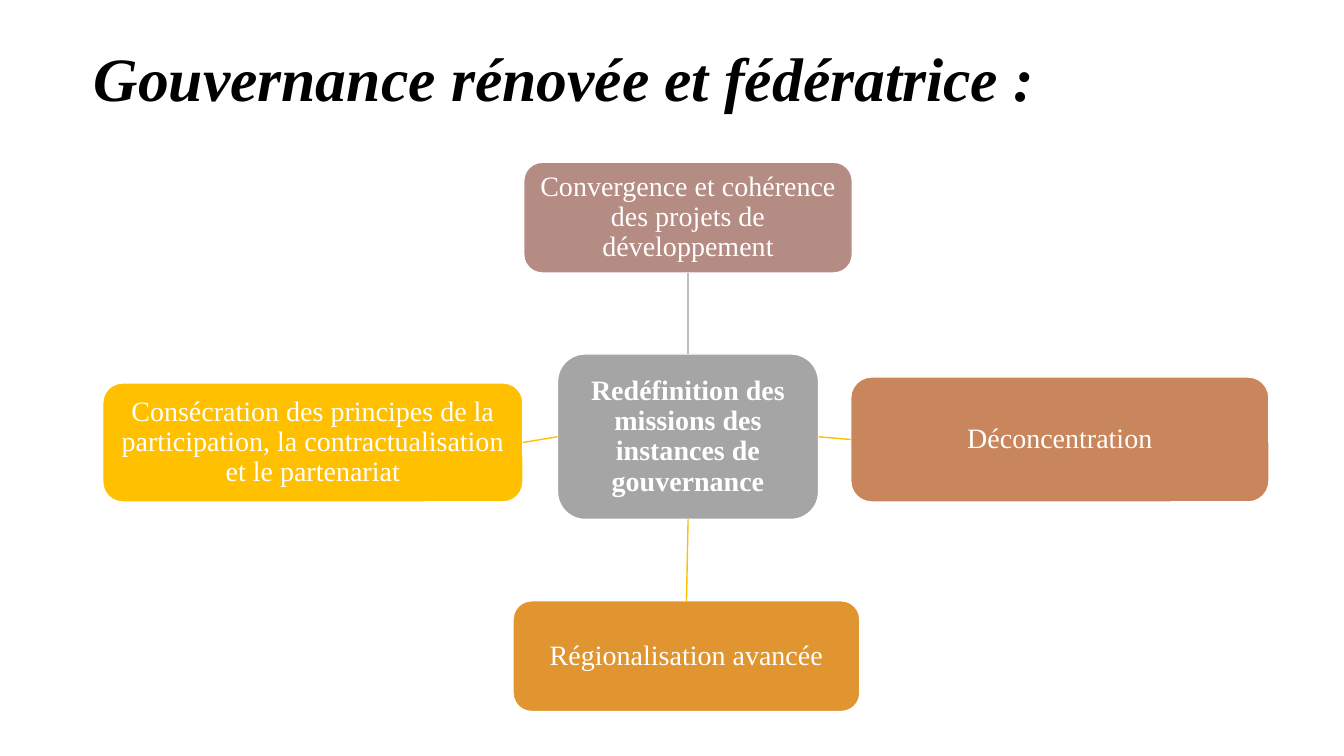
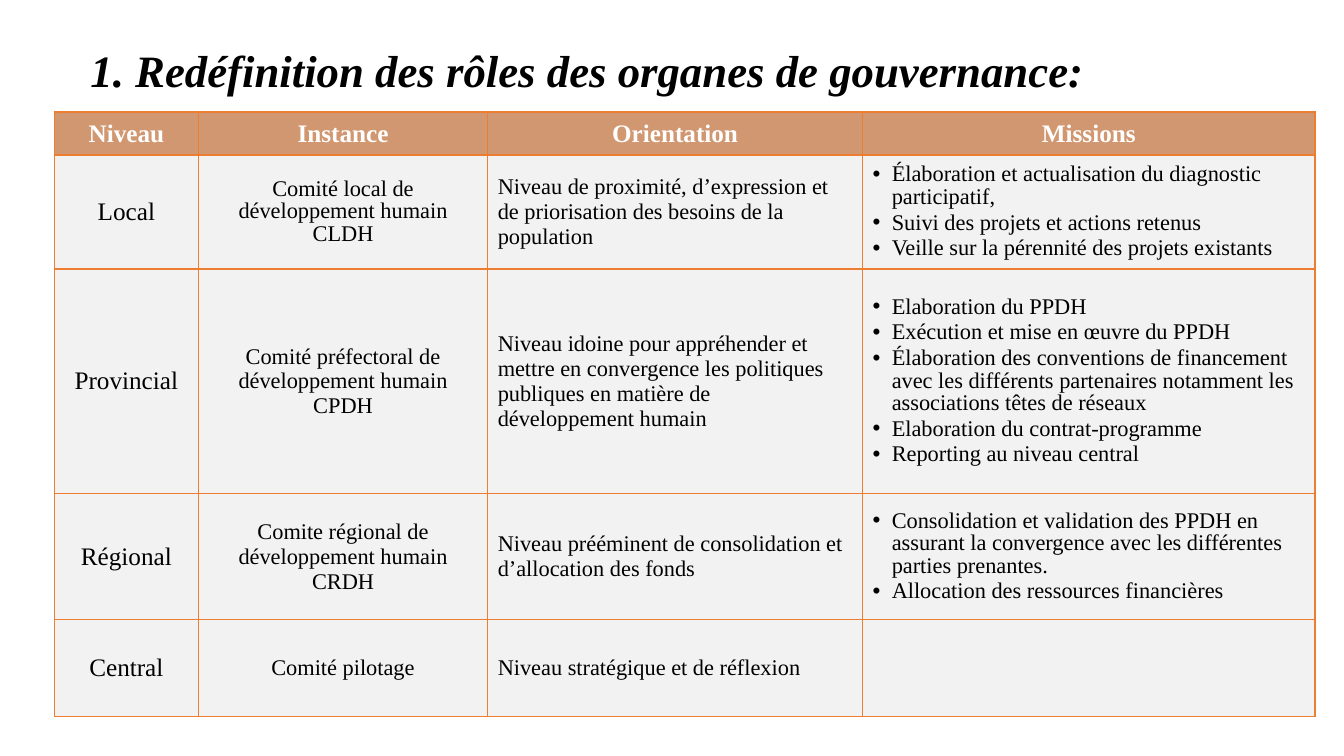
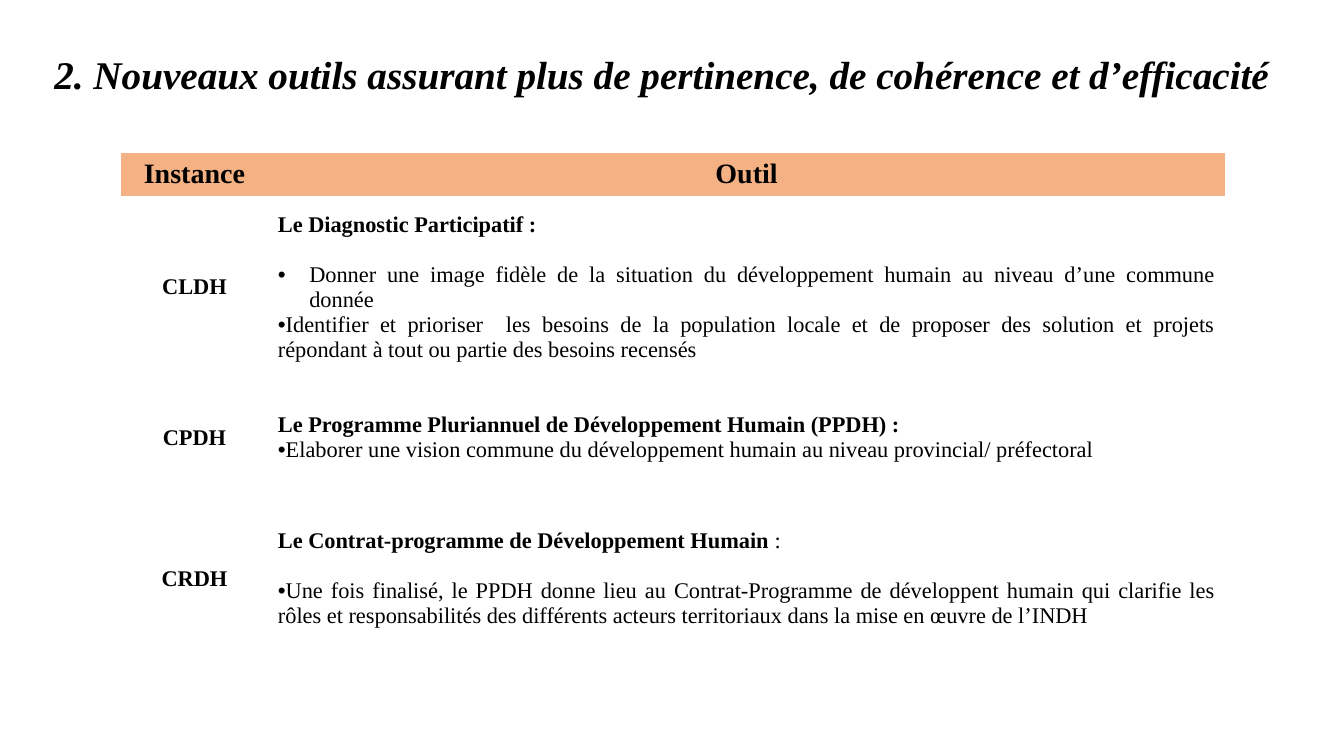
from dataclasses import dataclass
from functools import partial
from typing import Optional, Sequence

from lxml.etree import SubElement
from pptx import Presentation
from pptx.dml.color import RGBColor
from pptx.enum.shapes import MSO_CONNECTOR, MSO_SHAPE
from pptx.enum.text import MSO_ANCHOR, PP_ALIGN
from pptx.oxml.ns import qn
from pptx.util import Cm, Pt

COLORS = {
    "black": "000000", "white": "FFFFFF",
    "grey": "A5A5A5", "rose": "B48C83", "copper": "C9855C",
    "amber": "E19530", "gold": "FFC000", "silver": "BFBFBF",
    "border": "ED7D31", "header": "D19770", "cell": "F2F2F2", "peach": "F4B183",
}
FONT = "Times New Roman"
LEFT, CENTER, JUSTIFY = PP_ALIGN.LEFT, PP_ALIGN.CENTER, PP_ALIGN.JUSTIFY
TOP_SIDE, LEFT_SIDE, BOTTOM_SIDE, RIGHT_SIDE = range(4)


@dataclass(frozen=True)
class Para:
    """A paragraph; tail is a closing run in regular weight, indent (cm) adds a bullet."""
    text: str
    size: float = 16
    bold: bool = False
    italic: bool = False
    color: str = "black"
    align: PP_ALIGN = LEFT
    spacing: float = 1.0
    after: float = 0
    indent: Optional[float] = None
    tail: str = ""


@dataclass(frozen=True)
class Box:
    left: float
    top: float
    width: float
    height: float

    def lengths(self) -> list:
        return [Cm(v) for v in (self.left, self.top, self.width, self.height)]


@dataclass(frozen=True)
class Branch:
    """A box tied to the hub: hub_side and side are the joined sides."""
    text: str
    box: Box
    fill: str
    line: str
    hub_side: int
    side: int


@dataclass(frozen=True)
class Grid:
    left: float
    top: float
    cols: Sequence[float]
    rows: Sequence[float]
    header_fill: str
    body_fill: str
    border: Optional[str] = None


def rgb(name: str) -> RGBColor:
    return RGBColor.from_string(COLORS[name])


def apply(target, values: dict) -> None:
    for name, value in values.items():
        setattr(target, name, value)


def add_bullet(p, indent: float) -> None:
    pPr = p._p.get_or_add_pPr()
    pPr.set("marL", str(Cm(indent)))
    pPr.set("indent", str(-Cm(indent)))
    SubElement(pPr, qn("a:buFont"), typeface="Arial")
    SubElement(pPr, qn("a:buChar"), char="•")


def write(tf, paras: Sequence[Para]) -> None:
    for i, para in enumerate(paras):
        p = tf.add_paragraph() if i else tf.paragraphs[0]
        if para.indent is not None:
            add_bullet(p, para.indent)
        apply(p, {"alignment": para.align, "line_spacing": para.spacing,
                  "space_before": Pt(0), "space_after": Pt(para.after)})
        for text, bold in ((para.text, para.bold), (para.tail, False)):
            if text:
                r = p.add_run()
                r.text = text
                apply(r.font, {"name": FONT, "size": Pt(para.size),
                               "bold": bold, "italic": para.italic})
                r.font.color.rgb = rgb(para.color)


def add_title(s, text: str, size: float, box: Box) -> None:
    tf = s.shapes.add_textbox(*box.lengths()).text_frame
    apply(tf, {"word_wrap": True, "vertical_anchor": MSO_ANCHOR.MIDDLE})
    write(tf, [Para(text, size, bold=True, italic=True, spacing=0.9)])


def add_box(s, text: str, box: Box, fill: str, bold: bool = False):
    sp = s.shapes.add_shape(MSO_SHAPE.ROUNDED_RECTANGLE, *box.lengths())
    sp.shadow.inherit = False
    sp.fill.solid()
    sp.fill.fore_color.rgb = rgb(fill)
    sp.line.color.rgb = rgb("white")
    sp.line.width = Pt(1)
    tf = sp.text_frame
    apply(tf, {"word_wrap": True, "vertical_anchor": MSO_ANCHOR.MIDDLE})
    apply(tf, {f"margin_{side}": Cm(0.15) for side in ("left", "top", "right", "bottom")})
    write(tf, [Para(text, 20, bold, color="white", align=CENTER, spacing=0.9)])
    return sp


def join(s, start, start_side: int, end, end_side: int, color: str) -> None:
    line = s.shapes.add_connector(MSO_CONNECTOR.STRAIGHT, 0, 0, 0, 0)
    line.begin_connect(start, start_side)
    line.end_connect(end, end_side)
    line.line.color.rgb = rgb(color)
    line.line.width = Pt(1)
    SubElement(line._element.spPr, qn("a:effectLst"))


def set_borders(cell, color: Optional[str], widths: dict) -> None:
    """Draw the four sides, or hide them when there is no color."""
    tcPr = cell._tc.get_or_add_tcPr()
    for side, width in widths.items():
        ln = SubElement(tcPr, qn(f"a:ln{side}"), w=str(Pt(width)))
        if color:
            fill = SubElement(ln, qn("a:solidFill"))
            SubElement(fill, qn("a:srgbClr"), val=COLORS[color])
        else:
            SubElement(ln, qn("a:noFill"))


def add_grid(s, grid: Grid, content: Sequence[Sequence[Sequence[Para]]]) -> None:
    box = Box(grid.left, grid.top, sum(grid.cols), sum(grid.rows))
    table = s.shapes.add_table(len(grid.rows), len(grid.cols), *box.lengths()).table
    apply(table, {"first_row": False, "horz_banding": False})
    for column, width in zip(table.columns, grid.cols):
        column.width = Cm(width)
    for i, (row, height, cells) in enumerate(zip(table.rows, grid.rows, content)):
        row.height = Cm(height)
        widths = {"L": 1, "R": 1, "T": 2 if i == 1 else 1, "B": 2 if i == 0 else 1}
        for cell, paras in zip(row.cells, cells):
            set_borders(cell, grid.border, widths)
            cell.fill.solid()
            cell.fill.fore_color.rgb = rgb(grid.body_fill if i else grid.header_fill)
            cell.vertical_anchor = MSO_ANCHOR.MIDDLE
            write(cell.text_frame, paras)


HUB = Box(14.05, 8.92, 6.58, 4.17)
BRANCHES = [
    Branch("Convergence et cohérence des projets de développement",
           Box(13.2, 4.09, 8.28, 2.79), "rose", "silver", TOP_SIDE, BOTTOM_SIDE),
    Branch("Déconcentration",
           Box(21.44, 9.5, 10.54, 3.15), "copper", "gold", RIGHT_SIDE, LEFT_SIDE),
    Branch("Régionalisation avancée",
           Box(12.93, 15.14, 8.74, 2.79), "amber", "gold", BOTTOM_SIDE, TOP_SIDE),
    Branch("Consécration des principes de la participation, "
           "la contractualisation et le partenariat",
           Box(2.59, 9.65, 10.59, 3), "gold", "gold", LEFT_SIDE, RIGHT_SIDE),
]

level = partial(Para, size=18, align=CENTER)
body = partial(Para, align=CENTER)
mission = partial(Para, spacing=0.9, after=2.4, indent=0.48)
ROLES_GRID = Grid(1.37, 2.82, (3.63, 7.29, 9.45, 11.4), (1.09, 2.87, 5.66, 3.18, 2.44),
                  "header", "cell", "border")
ROLES = [
    [[level(t, bold=True, color="white")]
     for t in ("Niveau", "Instance", "Orientation", "Missions")],
    [[level("Local")],
     [body("Comité local de développement humain CLDH", spacing=0.9, after=2.4)],
     [Para("Niveau de proximité, d’expression et de priorisation des besoins "
           "de la population")],
     [mission("Élaboration et actualisation du diagnostic participatif,"),
      mission("Suivi des projets et actions retenus"),
      mission("Veille sur la pérennité des projets existants")]],
    [[level("Provincial")],
     [body("Comité préfectoral de développement humain CPDH")],
     [Para("Niveau idoine pour appréhender et mettre en convergence les politiques "
           "publiques en matière de développement humain")],
     [mission("Elaboration du PPDH"),
      mission("Exécution et mise en œuvre du PPDH"),
      mission("Élaboration des conventions de financement avec les différents "
              "partenaires notamment les associations têtes de réseaux"),
      mission("Elaboration du contrat-programme"),
      mission("Reporting au niveau central")]],
    [[level("Régional")],
     [body("Comite régional de développement humain"), body("CRDH")],
     [Para("Niveau prééminent de consolidation et d’allocation des fonds")],
     [mission("Consolidation et validation des PPDH en assurant la convergence "
              "avec les différentes parties prenantes."),
      mission("Allocation des ressources financières")]],
    [[level("Central")],
     [body("Comité pilotage")],
     [Para("Niveau stratégique et de réflexion")],
     []],
]

LINE_GAP = 18
heading = partial(Para, bold=True)
tool = partial(Para, align=JUSTIFY, indent=0)
TOOLS_GRID = Grid(3.05, 3.85, (3.7, 24.13), (1.09, 4.6, 2.97, 4.14), "peach", "white")
TOOLS = [
    [[body(t, size=20, bold=True)] for t in ("Instance", "Outil")],
    [[body("CLDH", bold=True, spacing=0.9)],
     [heading("Le Diagnostic Participatif :", after=LINE_GAP),
      tool("Donner une image fidèle de la situation du développement humain "
           "au niveau d’une commune donnée", indent=0.79),
      tool("Identifier et prioriser  les besoins de la population locale et de proposer "
           "des solution et projets répondant à tout ou partie des besoins recensés")]],
    [[body("CPDH", bold=True)],
     [heading("Le Programme Pluriannuel de Développement Humain (PPDH) :"),
      tool("Elaborer une vision commune du développement humain "
           "au niveau provincial/ préfectoral")]],
    [[body("CRDH", bold=True)],
     [heading("Le Contrat-programme de Développement Humain ", tail=":", after=LINE_GAP),
      tool("Une fois finalisé, le PPDH donne lieu au Contrat-Programme de développent "
           "humain qui clarifie les rôles et responsabilités des différents acteurs "
           "territoriaux dans la mise en œuvre de l’INDH", after=LINE_GAP)]],
]


def build_governance(s) -> None:
    add_title(s, "Gouvernance rénovée et fédératrice :", 44, Box(2.11, 0.81, 29.21, 2.51))
    hub = add_box(s, "Redéfinition des missions des instances de gouvernance",
                  HUB, "grey", bold=True)
    for b in BRANCHES:
        sp = add_box(s, b.text, b.box, b.fill)
        join(s, hub, b.hub_side, sp, b.side, b.line)


def build_roles(s) -> None:
    add_title(s, "1. Redéfinition des rôles des organes de gouvernance:", 32,
              Box(2.03, 0, 29.21, 3.68))
    add_grid(s, ROLES_GRID, ROLES)


def build_tools(s) -> None:
    add_grid(s, TOOLS_GRID, TOOLS)
    add_title(s, "2. Nouveaux outils assurant plus de pertinence, de cohérence et d’efficacité",
              28, Box(1.12, 0.56, 31.47, 2.77))


def main() -> None:
    prs = Presentation()
    apply(prs, {"slide_width": Cm(33.87), "slide_height": Cm(19.05)})
    for build in (build_governance, build_roles, build_tools):
        build(prs.slides.add_slide(prs.slide_layouts[6]))
    prs.save("out.pptx")


if __name__ == "__main__":
    main()
